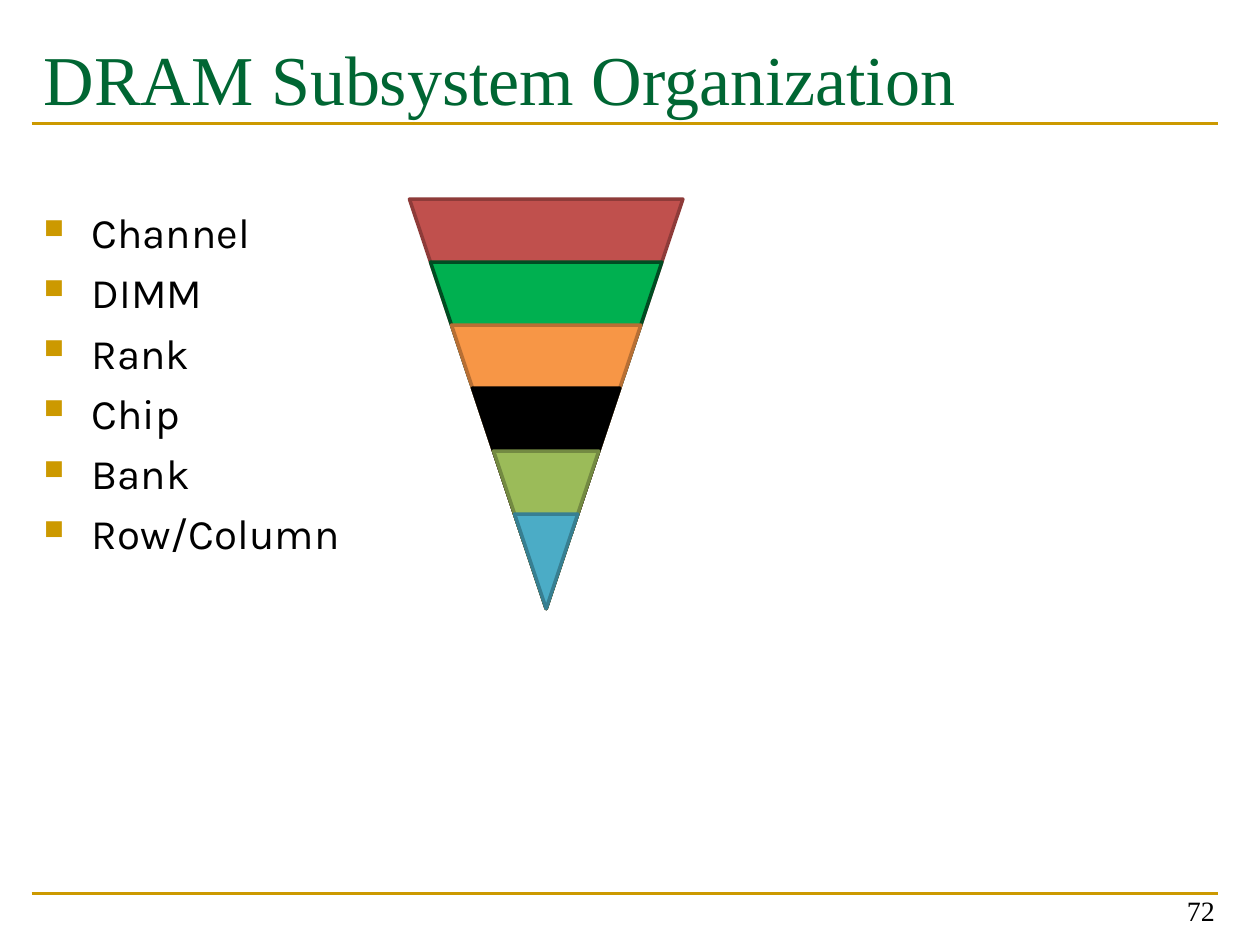
from dataclasses import dataclass

from lxml.etree import SubElement
from pptx import Presentation
from pptx.dml.color import RGBColor
from pptx.enum.shapes import MSO_CONNECTOR, MSO_SHAPE
from pptx.enum.text import MSO_ANCHOR, PP_ALIGN
from pptx.oxml.ns import qn
from pptx.util import Inches, Pt


@dataclass(frozen=True)
class Theme:
    title_color: str = "006633"
    text_color: str = "000000"
    accent: str = "CC9900"
    serif: str = "Times New Roman"
    sans: str = "Karla"
    title_size: float = 40
    body_size: float = 24
    number_size: float = 16
    bullet_gap: float = 5.6
    rule_width: float = 1.5
    outline_width: float = 2


THEME = Theme()

LEVELS = [
    ("Channel", "C0504D", "8E3B39"),
    ("DIMM", "00B050", "004C22"),
    ("Rank", "F79646", "B76F34"),
    ("Chip", "000000", "000000"),
    ("Bank", "9BBB59", "738A42"),
    ("Row/Column", "4BACC6", "377F92"),
]


def rgb(value):
    return RGBColor.from_string(value)


def add_text(slide, box, lines, *, font, size, color, align=PP_ALIGN.LEFT,
             anchor=MSO_ANCHOR.TOP, top_inset=0.05, gap=0):
    """Add one paragraph per line and return the text frame."""
    frame = slide.shapes.add_textbox(*map(Inches, box)).text_frame
    frame.word_wrap = True
    frame.vertical_anchor = anchor
    frame.margin_top = Inches(top_inset)
    for index, line in enumerate(lines):
        paragraph = frame.paragraphs[0] if index == 0 else frame.add_paragraph()
        paragraph.alignment = align
        paragraph.space_after = Pt(gap)
        run = paragraph.add_run()
        run.text = line
        run.font.name = font
        run.font.size = Pt(size)
        run.font.color.rgb = rgb(color)
    return frame


def add_bullet(paragraph):
    properties = paragraph._p.get_or_add_pPr()
    indent = Inches(0.38)
    properties.set("marL", str(indent))
    properties.set("indent", str(-indent))
    bullet_color = SubElement(properties, qn("a:buClr"))
    SubElement(bullet_color, qn("a:srgbClr"), val=THEME.accent)
    SubElement(properties, qn("a:buSzPct"), val="65000")
    SubElement(properties, qn("a:buChar"), char="■")


def add_rule(slide, left, top, width):
    rule = slide.shapes.add_connector(
        MSO_CONNECTOR.STRAIGHT, Inches(left), Inches(top),
        Inches(left + width), Inches(top))
    rule.line.color.rgb = rgb(THEME.accent)
    rule.line.width = Pt(THEME.rule_width)
    SubElement(rule._element.spPr, qn("a:effectLst"))


def add_header(slide, left, top, width, height):
    add_rule(slide, left, top + 0.81, width)
    add_text(slide, (left, top, width, height), ["DRAM Subsystem Organization"],
             font=THEME.serif, size=THEME.title_size, color=THEME.title_color,
             top_inset=0.11)


def add_level_list(slide, left, top, width, height):
    frame = add_text(slide, (left, top, width, height),
                     [name for name, _, _ in LEVELS], font=THEME.sans,
                     size=THEME.body_size, color=THEME.text_color,
                     top_inset=0, gap=THEME.bullet_gap)
    for paragraph in frame.paragraphs:
        add_bullet(paragraph)


def add_funnel(slide, left, top, width, height, step):
    """Stack triangles that share the bottom tip, each one step lower."""
    for index, (_, fill, outline) in enumerate(LEVELS):
        drop = index * step
        scale = 1 - drop / height
        inset = width * (1 - scale) / 2
        band = slide.shapes.add_shape(
            MSO_SHAPE.FLOWCHART_MERGE, Inches(left + inset), Inches(top + drop),
            Inches(width * scale), Inches(height * scale))
        band.shadow.inherit = False
        band.fill.solid()
        band.fill.fore_color.rgb = rgb(fill)
        band.line.color.rgb = rgb(outline)
        band.line.width = Pt(THEME.outline_width)


def add_footer(slide, left, top, width):
    add_rule(slide, left, top, width)
    number_width = 2.33
    number_left = left + width + 0.07 - number_width
    add_text(slide, (number_left, top - 0.18, number_width, 0.5), ["72"],
             font=THEME.serif, size=THEME.number_size, color=THEME.text_color,
             align=PP_ALIGN.RIGHT, anchor=MSO_ANCHOR.BOTTOM)


def main():
    presentation = Presentation()
    presentation.slide_width = Inches(10)
    presentation.slide_height = Inches(7.5)
    slide = presentation.slides.add_slide(presentation.slide_layouts[6])
    left, width = 0.25, 9.42
    add_footer(slide, left, 7.09, width)
    add_header(slide, left, 0.17, width, 1.17)
    add_level_list(slide, left, 1.64, width, 5.13)
    add_funnel(slide, 3.25, 1.58, 2.17, 3.25, step=0.5)
    presentation.save("out.pptx")


if __name__ == "__main__":
    main()
